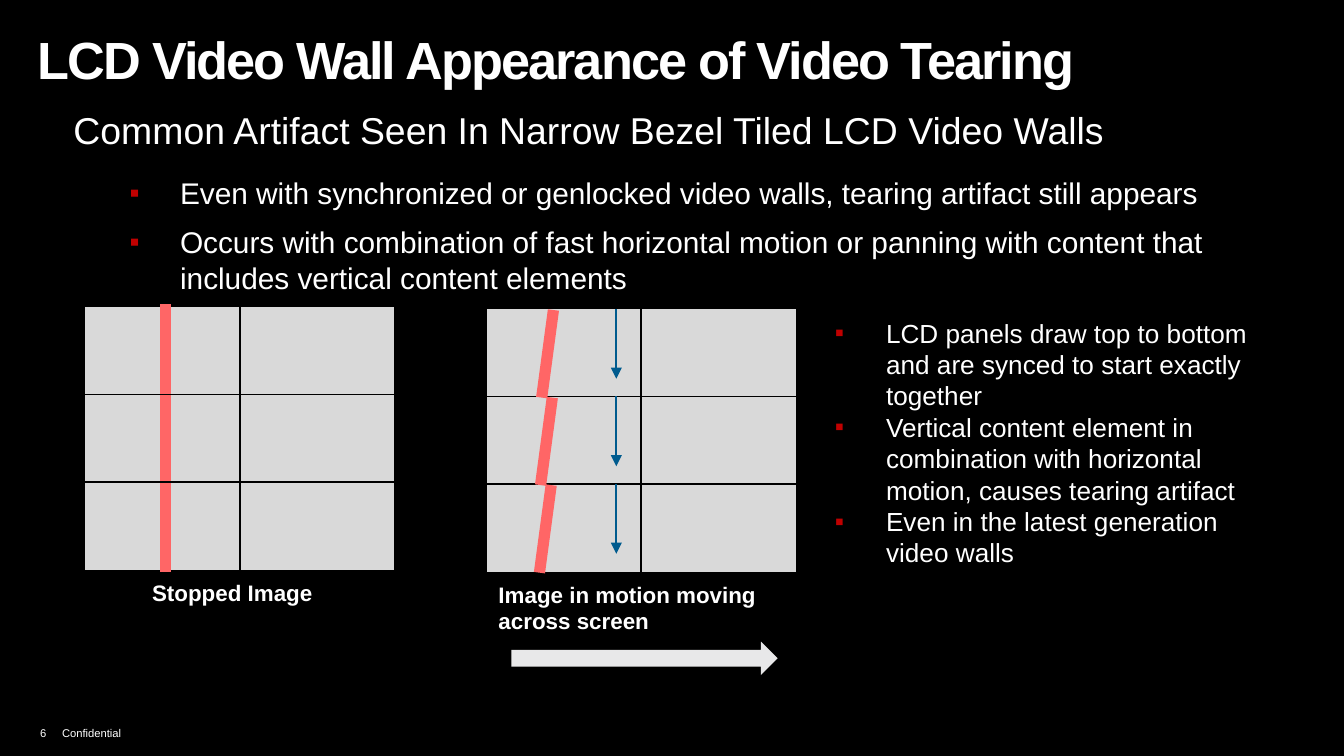
from dataclasses import dataclass
from lxml.etree import SubElement
from pptx import Presentation
from pptx.dml.color import RGBColor
from pptx.enum.shapes import MSO_CONNECTOR, MSO_SHAPE
from pptx.enum.text import MSO_ANCHOR, MSO_AUTO_SIZE, PP_ALIGN
from pptx.oxml.ns import qn
from pptx.util import Pt


@dataclass(frozen=True)
class Theme:
    font: str = "Arial"
    back: str = "000000"
    text: str = "FFFFFF"
    mark: str = "C00000"
    panel: str = "D9D9D9"
    bar: str = "FF6666"
    scan: str = "005B8E"
    arrow: str = "E8E8E9"
    title: int = 28
    lead: int = 20
    body: int = 16
    side: int = 14
    label: int = 12
    foot: int = 6


theme = Theme()


def write(shape, box, lines, size, bold=False, mark=None, left=0, hang=0,
          gap=0, anchor=MSO_ANCHOR.TOP):
    """Place a text shape and fill it with formatted paragraphs."""
    shape.left, shape.top, shape.width, shape.height = map(Pt, box)
    frame = shape.text_frame
    form = dict(word_wrap=True, auto_size=MSO_AUTO_SIZE.NONE,
                vertical_anchor=anchor, margin_left=Pt(7.2),
                margin_right=Pt(7.2), margin_top=Pt(3.6), margin_bottom=Pt(3.6))
    for name, value in form.items():
        setattr(frame, name, value)
    frame.text = "\n".join(lines)
    for num, para in enumerate(frame.paragraphs):
        form = dict(alignment=PP_ALIGN.LEFT, line_spacing=1.0,
                    space_before=Pt(gap if num else 0), space_after=Pt(0))
        for name, value in form.items():
            setattr(para, name, value)
        props = para._p.get_or_add_pPr()
        props.set("marL", str(Pt(left)))
        props.set("indent", str(Pt(-hang)))
        if mark:
            tint = SubElement(props, qn("a:buClr"))
            SubElement(tint, qn("a:srgbClr"), val=theme.mark)
            SubElement(props, qn("a:buSzPct"), val=str(mark * 1000))
            SubElement(props, qn("a:buFont"), typeface=theme.font)
            SubElement(props, qn("a:buChar"), char="▪")
        else:
            SubElement(props, qn("a:buNone"))
        for run in para.runs:
            form = dict(name=theme.font, size=Pt(size), bold=bold)
            for name, value in form.items():
                setattr(run.font, name, value)
            run.font.color.rgb = RGBColor.from_string(theme.text)
    return frame


def wire(x1, y1, x2, y2, color=theme.back, width=0.94, head=False):
    """Draw a straight line, with an arrowhead at its end if asked."""
    line = slide.shapes.add_connector(MSO_CONNECTOR.STRAIGHT, *map(Pt, (x1, y1, x2, y2)))
    line.line.color.rgb = RGBColor.from_string(color)
    line.line.width = Pt(width)
    if head:
        SubElement(line.line._get_or_add_ln(), qn("a:tailEnd"), type="triangle")
    SubElement(line._element.spPr, qn("a:effectLst"))


# Slide
deck = Presentation()
deck.slide_width, deck.slide_height = Pt(720), Pt(405)
slide = deck.slides.add_slide(deck.slide_layouts[3])
slide.background.fill.solid()
slide.background.fill.fore_color.rgb = RGBColor.from_string(theme.back)
title, lead, body = slide.placeholders

# Title, lead line and main list
frame = write(title, (13, 10.8, 612, 36.7), ["LCD Video Wall Appearance of Video Tearing"],
              theme.title, bold=True)
frame.paragraphs[0].runs[0].font._element.set("spc", "-100")
write(lead, (26.8, 54, 683.3, 29.5),
      ["Common Artifact Seen In Narrow Bezel Tiled LCD Video Walls"],
      theme.lead, left=32.4, hang=27)
write(body, (56.9, 90, 644.4, 69.8), [
    "Even with synchronized or genlocked video walls, tearing artifact still appears",
    "Occurs with combination of fast horizontal motion or panning with content that "
    "includes vertical content elements",
], theme.body, mark=95, left=32.4, hang=27, gap=7)

# Video walls: two columns by three rows of panels
wide, high = 167.2, 142.4
cell, row = wide / 2, 46.9
still, moving = (44.9, 163.8), (260, 164.9)
for x, y in (still, moving):
    wall = slide.shapes.add_shape(MSO_SHAPE.RECTANGLE, *map(Pt, (x, y, wide, high)))
    wall.shadow.inherit = False
    wall.fill.solid()
    wall.fill.fore_color.rgb = RGBColor.from_string(theme.panel)
    wall.line.color.rgb = RGBColor.from_string(theme.back)
    wall.line.width = Pt(1.5)
    for col in range(3):
        wire(x + col * cell, y + 0.7, x + col * cell, y + high)
    if (x, y) == still:
        wire(88.6, y - 0.9, 88.6, y + high, theme.bar, 6)
    for num in (1, 2):
        wire(x, y + 0.7 + num * row, x + wide, y + 0.7 + num * row)

# Torn bar and scan arrow in each row of the moving wall
x, y = moving
for num in range(3):
    base = y + 1.2 + num * row
    tip = 296.5 - num * 0.6
    wire(tip, base, tip - 6.3, base + row, theme.bar, 6)
    scan = y + 0.5 + num * row
    wire(330.2, scan, 330.2, scan + 37.5, theme.scan, head=True)

# Captions
for box, words in (((74.4, 306.7, 108, 21.6), "Stopped Image"),
                   ((260, 307.6, 187.2, 36), "Image in motion moving across screen")):
    write(slide.shapes.add_textbox(0, 0, 0, 0), box, [words], theme.label, bold=True)

# Motion arrow
arrow = slide.shapes.add_shape(MSO_SHAPE.RIGHT_ARROW, *map(Pt, (274, 343.7, 142.6, 18)))
arrow.shadow.inherit = False
arrow.fill.solid()
arrow.fill.fore_color.rgb = RGBColor.from_string(theme.arrow)
arrow.line.fill.background()

# Side list
write(slide.shapes.add_textbox(0, 0, 0, 0), (440.2, 166.3, 239.8, 143.3), [
    "LCD panels draw top to bottom and are synced to start exactly together",
    "Vertical content element in combination with horizontal motion, causes tearing artifact",
    "Even in the latest generation video walls",
], theme.side, mark=100, left=27.4, hang=27.4)

# Footer: the tab after the page number runs to the hanging indent
write(slide.shapes.add_textbox(0, 0, 0, 0), (14.4, 381.6, 84.2, 18),
      ["6\tConfidential"], theme.foot, left=11.8, hang=11.8, anchor=MSO_ANCHOR.BOTTOM)

deck.save("out.pptx")
